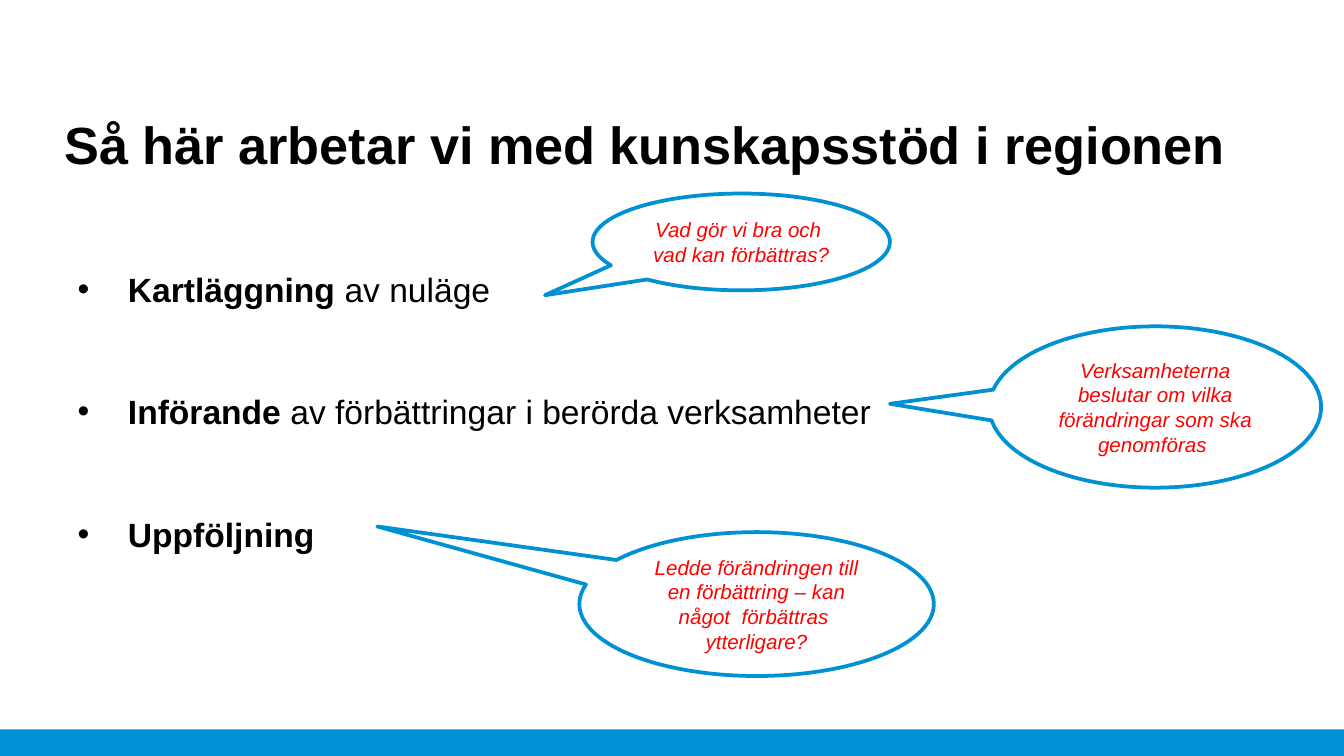
from lxml import etree
from pptx import Presentation
from pptx.dml.color import RGBColor
from pptx.enum.shapes import MSO_SHAPE
from pptx.enum.text import MSO_ANCHOR, MSO_AUTO_SIZE, PP_ALIGN
from pptx.oxml.ns import qn
from pptx.util import Cm, Pt

BAR = MSO_SHAPE.RECTANGLE
BUBBLE = MSO_SHAPE.OVAL_CALLOUT
BOTTOM, MIDDLE = MSO_ANCHOR.BOTTOM, MSO_ANCHOR.MIDDLE
CENTER = PP_ALIGN.CENTER
FIT_TEXT = MSO_AUTO_SIZE.SHAPE_TO_FIT_TEXT

FONT = "Arial"
COLORS = {"blue": "0090D4", "white": "FFFFFF", "black": "000000", "red": "FF0000"}
WIDTH, HEIGHT = Cm(25.4), Cm(14.29)
LEFT = Cm(1.22)

STEPS = [
    ("Kartläggning", " av nuläge"),
    ("Införande", " av förbättringar i berörda verksamheter"),
    ("Uppföljning", ""),
]

# Text, (left, top, width, height) in cm, pointer tip relative to the centre
QUESTIONS = [
    ("Vad gör vi bra och \vvad kan förbättras?",
     (11.2, 3.66, 5.62, 1.83), (-0.66, 0.55)),
    ("Verksamheterna beslutar om vilka förändringar som ska genomföras ",
     (18.7, 6.17, 6.27, 3.05), (-0.8, -0.02)),
    ("Ledde förändringen till en förbättring – kan något  förbättras  ytterligare?",
     (10.95, 10.06, 6.7, 2.72), (-1.07, -0.54)),
]


def color(name):
    return RGBColor.from_string(COLORS[name])


def style(run, size, ink, bold=False, italic=False):
    font = run.font
    font.name, font.size = FONT, Pt(size)
    font.bold, font.italic = bold, italic
    font.color.rgb = color(ink)


def add_bar(slide):
    bar_height = Cm(0.5)
    bar = slide.shapes.add_shape(BAR, 0, HEIGHT - bar_height, WIDTH, bar_height)
    bar.shadow.inherit = False
    bar.fill.solid()
    bar.fill.fore_color.rgb = color("blue")
    bar.line.fill.background()


def add_title(slide, text):
    title = slide.shapes.add_textbox(LEFT, Cm(1.9), Cm(22.07), Cm(1.4))
    frame = title.text_frame
    frame.word_wrap = True
    frame.vertical_anchor = BOTTOM
    frame.margin_left = frame.margin_right = 0
    frame.margin_top = frame.margin_bottom = 0
    frame.text = text
    style(frame.paragraphs[0].runs[0], 28, "black", bold=True)


def add_bullet(paragraph):
    indent = Cm(0.95)
    properties = paragraph._p.get_or_add_pPr()
    properties.set("marL", str(indent))
    properties.set("indent", str(-indent))
    etree.SubElement(properties, qn("a:buFont")).set("typeface", FONT)
    etree.SubElement(properties, qn("a:buChar")).set("char", "•")


def add_steps(slide):
    steps = slide.shapes.add_textbox(LEFT, Cm(4.88), Cm(15.9), Cm(5.64))
    frame = steps.text_frame
    frame.word_wrap = True
    frame.auto_size = FIT_TEXT
    frame.margin_top = Cm(0.2)
    for number, (keyword, detail) in enumerate(STEPS):
        step = frame.add_paragraph() if number else frame.paragraphs[0]
        add_bullet(step)
        if number:
            step.space_before = Pt(44)
        step.text = keyword
        style(step.runs[0], 18, "black", bold=True)
        if detail:
            rest = step.add_run()
            rest.text = detail
            style(rest, 18, "black")


def add_question(slide, text, box, tip):
    bubble = slide.shapes.add_shape(BUBBLE, *(Cm(length) for length in box))
    bubble.adjustments[0], bubble.adjustments[1] = tip
    bubble.shadow.inherit = False
    bubble.fill.solid()
    bubble.fill.fore_color.rgb = color("white")
    bubble.line.color.rgb = color("blue")
    bubble.line.width = Pt(2)
    frame = bubble.text_frame
    frame.word_wrap = True
    frame.vertical_anchor = MIDDLE
    question = frame.paragraphs[0]
    question.text = text
    question.alignment = CENTER
    for run in question.runs:
        style(run, 11, "red", italic=True)


def main():
    deck = Presentation()
    deck.slide_width, deck.slide_height = WIDTH, HEIGHT
    slide = deck.slides.add_slide(deck.slide_layouts[6])

    # Footer bar and heading
    add_bar(slide)
    add_title(slide, "Så här arbetar vi med kunskapsstöd i regionen")

    # Working steps with a speech bubble for each
    add_steps(slide)
    for text, box, tip in QUESTIONS:
        add_question(slide, text, box, tip)

    deck.save("out.pptx")


if __name__ == "__main__":
    main()
